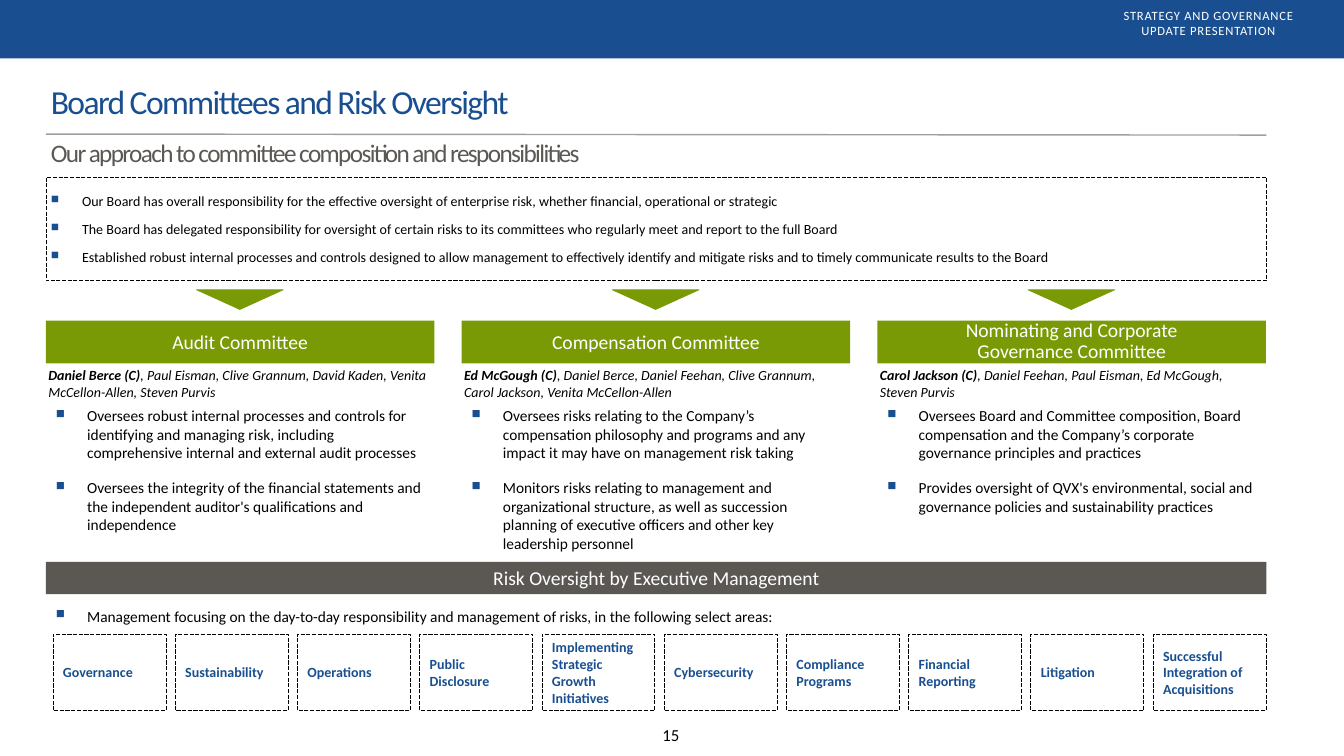
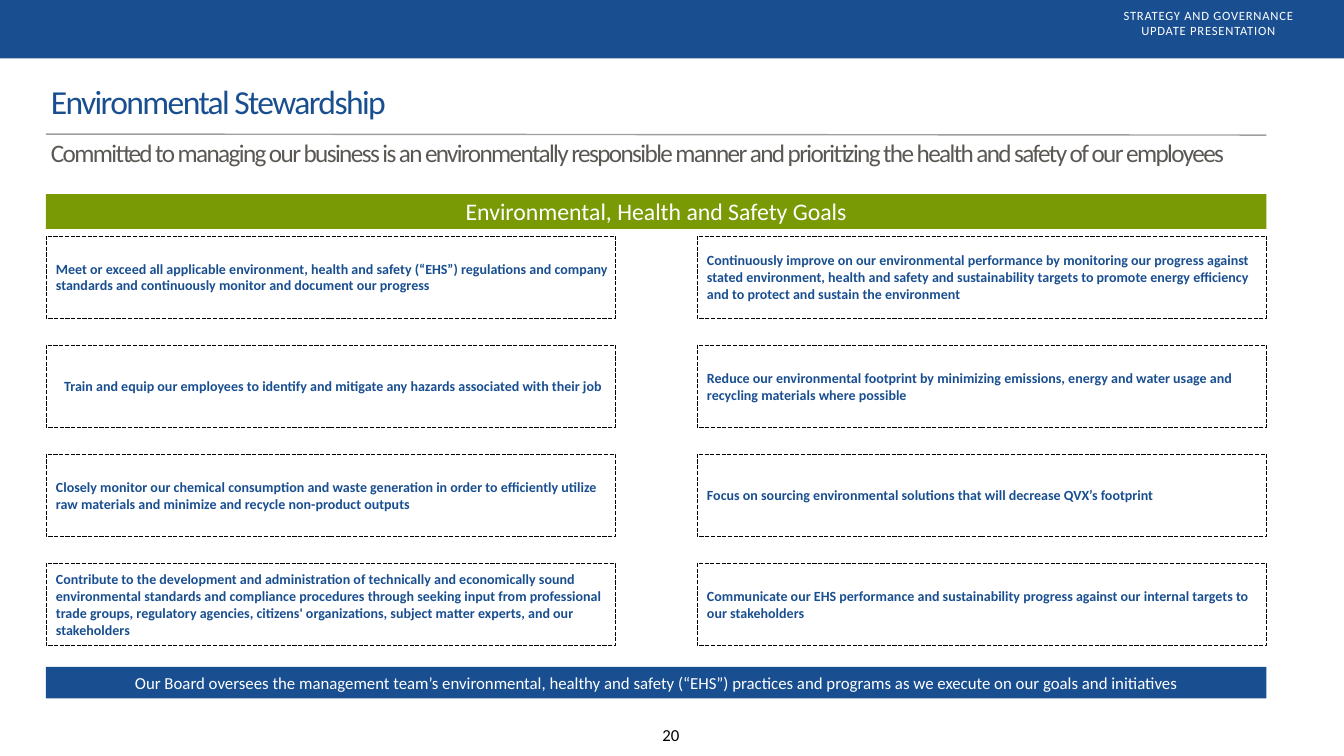
from dataclasses import dataclass

from lxml.etree import SubElement
from pptx import Presentation
from pptx.dml.color import RGBColor
from pptx.enum.dml import MSO_LINE
from pptx.enum.shapes import MSO_CONNECTOR, MSO_SHAPE
from pptx.enum.text import MSO_ANCHOR as Anchor
from pptx.enum.text import MSO_AUTO_SIZE as AutoSize
from pptx.enum.text import PP_ALIGN as Align
from pptx.oxml.ns import qn
from pptx.shapes.base import BaseShape
from pptx.slide import Slide
from pptx.util import Inches, Pt

BLUE = RGBColor(0x19, 0x4F, 0x90)
GREEN = RGBColor(0x79, 0x9A, 0x05)
GRAY = RGBColor(0x5B, 0x58, 0x54)
RULE_GRAY = RGBColor(0x80, 0x80, 0x80)
BLACK = RGBColor(0, 0, 0)
WHITE = RGBColor(0xFF, 0xFF, 0xFF)

FONT = "Calibri"
LEFT = 0.91
CONTENT_WIDTH = 24.22
BULLET_INDENT = 0.62
TIGHT = (0.06, 0.06, 0.06, 0.06)
BULLET_INSETS = (0.2, 0.2, 0.2, 0.1)


@dataclass(frozen=True)
class Box:
    left: float
    top: float
    width: float
    height: float

    def lengths(self) -> tuple:
        return tuple(Inches(v) for v in (self.left, self.top, self.width, self.height))


@dataclass(frozen=True)
class Committee:
    name: tuple[str, ...]
    chair: str
    members: tuple[str, ...]
    duties: tuple[str, ...]


COMMITTEES = (
    Committee(
        ("Audit Committee",),
        "Daniel Berce (C)",
        (", Paul Eisman, Clive Grannum, David Kaden, Venita McCellon-Allen, Steven Purvis",),
        (
            "Oversees robust internal processes and controls for identifying and managing risk, "
            "including comprehensive internal and external audit processes",
            "Oversees the integrity of the financial statements and the independent auditor's "
            "qualifications and independence",
        ),
    ),
    Committee(
        ("Compensation Committee",),
        "Ed McGough (C)",
        (", Daniel Berce, Daniel Feehan, Clive Grannum,", "Carol Jackson, Venita McCellon-Allen"),
        (
            "Oversees risks relating to the Company’s compensation philosophy and programs and any "
            "impact it may have on management risk taking",
            "Monitors risks relating to management and organizational structure, as well as "
            "succession planning of executive officers and other key leadership personnel",
        ),
    ),
    Committee(
        ("Nominating and Corporate", "Governance Committee"),
        "Carol Jackson (C)",
        (", Daniel Feehan, Paul Eisman, Ed McGough, Steven Purvis",),
        (
            "Oversees Board and Committee composition, Board compensation and the Company’s "
            "corporate governance principles and practices",
            "Provides oversight of QVX's environmental, social and governance policies and "
            "sustainability practices",
        ),
    ),
)

BOARD_POINTS = (
    "Our Board has overall responsibility for the effective oversight of enterprise risk, "
    "whether financial, operational or strategic",
    "The Board has delegated responsibility for oversight of certain risks to its committees "
    "who regularly meet and report to the full Board",
    "Established robust internal processes and controls designed to allow management to "
    "effectively identify and mitigate risks and to timely communicate results to the Board",
)

RISK_AREAS = (
    "Governance", "Sustainability", "Operations", "Public Disclosure",
    "Implementing Strategic Growth Initiatives", "Cybersecurity", "Compliance Programs",
    "Financial Reporting", "Litigation", "Successful Integration of Acquisitions",
)

# Goals run left to right, then down
GOALS = (
    "Meet or exceed all applicable environment, health and safety (“EHS”) regulations and "
    "company standards and continuously monitor and document our progress",
    "Continuously improve on our environmental performance by monitoring our progress against "
    "stated environment, health and safety and sustainability targets to promote energy "
    "efficiency and to protect and sustain the environment",
    "Train and equip our employees to identify and mitigate any hazards associated with their job",
    "Reduce our environmental footprint by minimizing emissions, energy and water usage and "
    "recycling materials where possible",
    "Closely monitor our chemical consumption and waste generation in order to efficiently "
    "utilize raw materials and minimize and recycle non-product outputs",
    "Focus on sourcing environmental solutions that will decrease QVX’s footprint",
    "Contribute to the development and administration of technically and economically sound "
    "environmental standards and compliance procedures through seeking input from professional "
    "trade groups, regulatory agencies, citizens' organizations, subject matter experts, and "
    "our stakeholders",
    "Communicate our EHS performance and sustainability progress against our internal targets "
    "to our stakeholders",
)
CENTERED_GOAL = 2


def write_text(
    shape: BaseShape, *texts: str, size: float, color: RGBColor = BLACK,
    bold: bool = False, italic: bool = False, lead: str = "",
    align: Align = Align.LEFT, anchor: Anchor = Anchor.TOP,
    insets: tuple = (0.1, 0.05, 0.1, 0.05), gap: float = 0, line_spacing: float = 1,
    tracking: float = 0, bullets: bool = False, wrap: bool = True,
) -> None:
    """Write one paragraph per text; a bold lead may open the first one."""
    frame = shape.text_frame
    frame.word_wrap = wrap
    frame.auto_size = AutoSize.NONE if wrap else AutoSize.SHAPE_TO_FIT_TEXT
    frame.vertical_anchor = anchor
    frame.margin_left, frame.margin_top, frame.margin_right, frame.margin_bottom = (
        Inches(inset) for inset in insets
    )
    for index, text in enumerate(texts):
        paragraph = frame.add_paragraph() if index else frame.paragraphs[0]
        if bullets:
            add_bullet(paragraph)
        paragraph.alignment = align
        paragraph.line_spacing = line_spacing
        paragraph.space_before = Pt(gap if index else 0)
        paragraph.space_after = Pt(gap)
        parts = [(lead, True)] if lead and index == 0 else []
        for content, is_bold in parts + [(text, bold)]:
            run = paragraph.add_run()
            run.text = content
            font = run.font
            font.name, font.size, font.bold, font.italic = FONT, Pt(size), is_bold, italic
            font.color.rgb = color
            if tracking:
                run._r.get_or_add_rPr().set("spc", str(round(tracking * 100)))


def add_bullet(paragraph) -> None:
    properties = paragraph._p.get_or_add_pPr()
    properties.set("marL", str(Inches(BULLET_INDENT)))
    properties.set("indent", str(-Inches(BULLET_INDENT)))
    bullet_color = SubElement(properties, qn("a:buClr"))
    SubElement(bullet_color, qn("a:srgbClr")).set("val", str(BLUE))
    SubElement(properties, qn("a:buSzPct")).set("val", "80000")
    SubElement(properties, qn("a:buChar")).set("char", "■")


def add_text(slide: Slide, box: Box, *texts: str, **text_format) -> None:
    write_text(slide.shapes.add_textbox(*box.lengths()), *texts, **text_format)


def add_filled(slide: Slide, box: Box, color: RGBColor, kind=MSO_SHAPE.RECTANGLE) -> BaseShape:
    shape = slide.shapes.add_shape(kind, *box.lengths())
    shape.shadow.inherit = False
    shape.fill.solid()
    shape.fill.fore_color.rgb = color
    shape.line.fill.background()
    return shape


def add_band(slide: Slide, box: Box, color: RGBColor, *texts: str, size: float = 28,
             line_spacing: float = 1) -> None:
    write_text(add_filled(slide, box, color), *texts, size=size, color=WHITE,
               align=Align.CENTER, anchor=Anchor.MIDDLE, insets=TIGHT,
               line_spacing=line_spacing)


def add_dashed_box(slide: Slide, box: Box, *texts: str, **text_format) -> None:
    shape = slide.shapes.add_shape(MSO_SHAPE.RECTANGLE, *box.lengths())
    shape.shadow.inherit = False
    shape.fill.background()
    shape.line.color.rgb = BLACK
    shape.line.width = Pt(0.75)
    shape.line.dash_style = MSO_LINE.LONG_DASH
    write_text(shape, *texts, size=20, anchor=Anchor.MIDDLE, **text_format)


def add_label_box(slide: Slide, box: Box, text: str, align: Align = Align.LEFT) -> None:
    add_dashed_box(slide, box, text, color=BLUE, bold=True, align=align, gap=16,
                   insets=(0.2, 0.1, 0.1, 0.1))


def add_title_rule(slide: Slide) -> None:
    rule = slide.shapes.add_connector(
        MSO_CONNECTOR.STRAIGHT, Inches(LEFT), Inches(2.66),
        Inches(LEFT + CONTENT_WIDTH), Inches(2.68))
    rule.line.color.rgb = RULE_GRAY
    rule.line.width = Pt(2)
    properties = rule._element.spPr
    color = properties.find(".//" + qn("a:srgbClr"))
    SubElement(color, qn("a:alpha")).set("val", "75000")
    SubElement(properties, qn("a:effectLst"))


def add_framed_slide(presentation, title: str, subtitle: str, number: int,
                     subtitle_width: float = CONTENT_WIDTH) -> Slide:
    """Add a slide with the header band, titles, rule and page number."""
    slide = presentation.slides.add_slide(presentation.slide_layouts[6])
    add_filled(slide, Box(0, -0.23, 26.67, 1.39), BLUE)
    add_text(slide, Box(21.8, 0.1, 4.36, 0.72), "STRATEGY AND GOVERNANCE",
             "UPDATE PRESENTATION", size=18, color=WHITE, tracking=1.1,
             align=Align.CENTER, anchor=Anchor.MIDDLE, insets=TIGHT, wrap=False)
    add_text(slide, Box(LEFT, 1.65, CONTENT_WIDTH, 1.25), title, size=48, color=BLUE,
             tracking=-2.3, line_spacing=0.9)
    add_title_rule(slide)
    add_text(slide, Box(LEFT, 2.75, subtitle_width, 0.79), subtitle, size=36, color=GRAY,
             tracking=-2.3, line_spacing=0.9)
    add_text(slide, Box(12.96, 14.32, 0.71, 0.52), str(number), size=24,
             align=Align.CENTER, insets=TIGHT)
    return slide


def add_committee(slide: Slide, left: float, committee: Committee) -> None:
    width = 7.71
    arrow = add_filled(slide, Box(left + 2.99, 5.75, 1.72, 0.39), GREEN,
                       MSO_SHAPE.ISOSCELES_TRIANGLE)
    arrow.rotation = 180
    arrow.line.color.rgb = GREEN
    arrow.line.width = Pt(1)
    add_band(slide, Box(left, 6.36, width, 0.85), GREEN, *committee.name,
             line_spacing=0.9 if len(committee.name) > 1 else 1)
    add_text(slide, Box(left, 7.31, width, 0.61), *committee.members, lead=committee.chair,
             size=20, italic=True, anchor=Anchor.MIDDLE, insets=(0.05, 0.1, 0.05, 0.1))
    add_text(slide, Box(left, 7.86, width, 3.17), *committee.duties, size=22, gap=12,
             bullets=True, insets=BULLET_INSETS)


def build_committees_slide(presentation) -> None:
    slide = add_framed_slide(presentation, "Board Committees and Risk Oversight",
                             "Our approach to committee composition and responsibilities", 15)
    add_dashed_box(slide, Box(LEFT, 3.52, CONTENT_WIDTH, 2.05), *BOARD_POINTS, gap=8,
                   bullets=True, insets=(0.1, 0.2, 0.1, 0.2))
    for column, committee in enumerate(COMMITTEES):
        add_committee(slide, LEFT + column * 8.25, committee)

    # Executive management and its risk areas
    add_band(slide, Box(LEFT, 11.15, CONTENT_WIDTH, 0.64), GRAY,
             "Risk Oversight by Executive Management")
    add_text(slide, Box(LEFT, 11.84, CONTENT_WIDTH, 0.77),
             "Management focusing on the day-to-day responsibility and management of risks, "
             "in the following select areas:",
             size=22, gap=6, bullets=True, insets=BULLET_INSETS)
    area_pitch = 21.83 / (len(RISK_AREAS) - 1)
    for column, area in enumerate(RISK_AREAS):
        add_label_box(slide, Box(1.05 + column * area_pitch, 12.58, 2.24, 1.52), area)


def build_stewardship_slide(presentation) -> None:
    slide = add_framed_slide(
        presentation, "Environmental Stewardship",
        "Committed to managing our business is an environmentally responsible manner and "
        "prioritizing the health and safety of our employees", 20, subtitle_width=24.72)
    add_band(slide, Box(LEFT, 3.85, CONTENT_WIDTH, 0.69), GREEN,
             "Environmental, Health and Safety Goals", size=34)
    for index, goal in enumerate(GOALS):
        row, column = divmod(index, 2)
        box = Box(LEFT + column * 12.92, 4.68 + row * 6.5 / 3, 11.3, 1.63)
        add_label_box(slide, box, goal,
                      Align.CENTER if index == CENTERED_GOAL else Align.LEFT)
    add_band(slide, Box(LEFT, 13.23, CONTENT_WIDTH, 0.63), BLUE,
             "Our Board oversees the management team’s environmental, healthy and safety "
             "(“EHS”) practices and programs as we execute on our goals and initiatives", size=24)


def main() -> None:
    presentation = Presentation()
    presentation.slide_width = Inches(26.67)
    presentation.slide_height = Inches(15)
    build_committees_slide(presentation)
    build_stewardship_slide(presentation)
    presentation.save("out.pptx")


if __name__ == "__main__":
    main()
